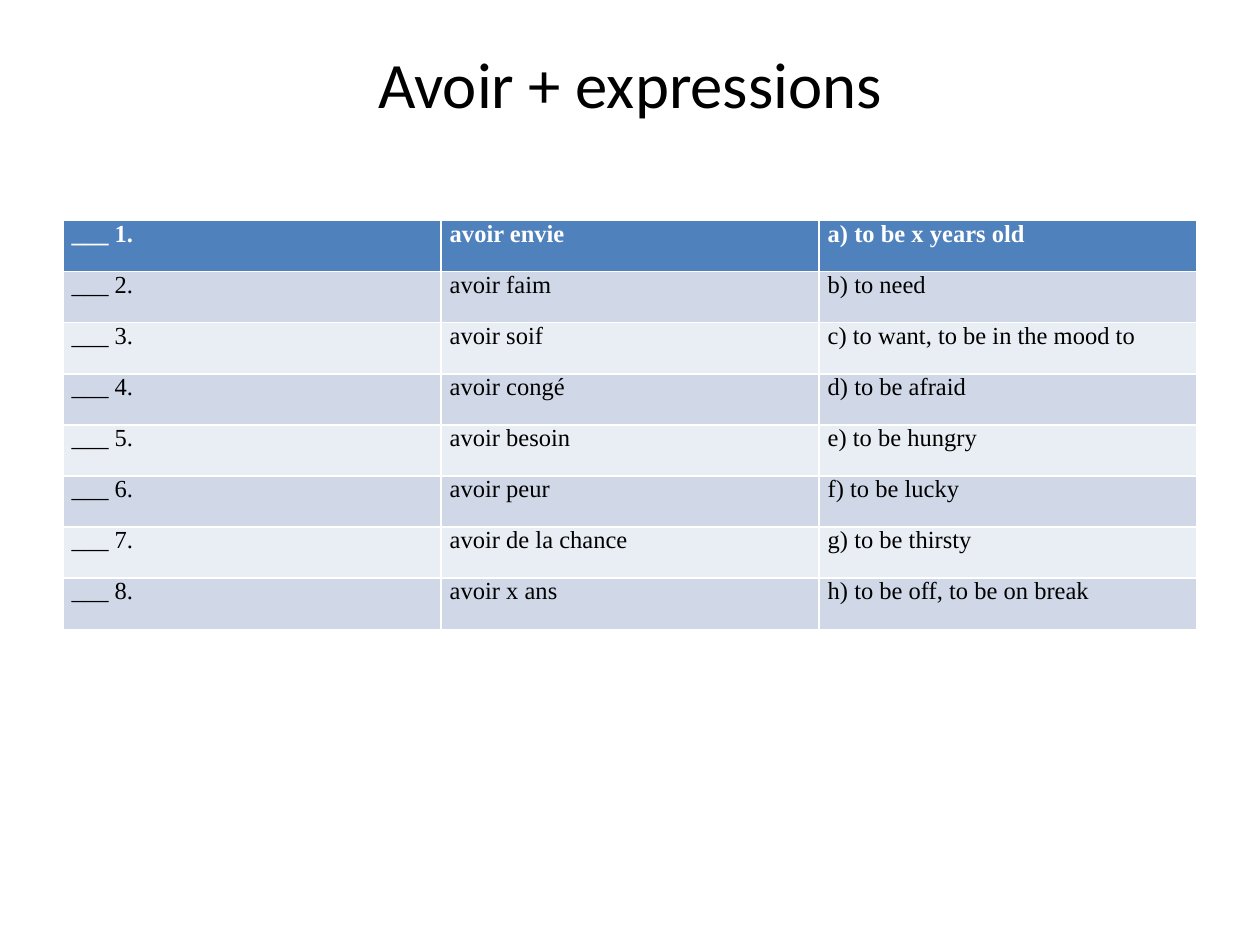
from dataclasses import dataclass

from pptx import Presentation
from pptx.dml.color import RGBColor
from pptx.enum.text import MSO_ANCHOR, MSO_AUTO_SIZE, PP_ALIGN
from pptx.slide import Slide
from pptx.text.text import TextFrame
from pptx.util import Pt

BLACK = RGBColor(0x00, 0x00, 0x00)
WHITE = RGBColor(0xFF, 0xFF, 0xFF)
HEADER_BLUE = RGBColor(0x4F, 0x81, 0xBD)
BAND_DARK = RGBColor(0xD0, 0xD8, 0xE8)
BAND_LIGHT = RGBColor(0xE9, 0xED, 0xF4)

TITLE_ONLY_LAYOUT = 5
COLUMN_WIDTH = 216
ROW_HEIGHT = 29.2
CELL_MARGIN = 5


@dataclass(frozen=True)
class MatchingRow:
    expression: str
    meaning: str


MATCHING_ROWS = [
    MatchingRow("avoir envie", "a) to be x years old"),
    MatchingRow("avoir faim", "b) to need"),
    MatchingRow("avoir soif", "c) to want, to be in the mood to"),
    MatchingRow("avoir congé", "d) to be afraid"),
    MatchingRow("avoir besoin", "e) to be hungry"),
    MatchingRow("avoir peur", "f) to be lucky"),
    MatchingRow("avoir de la chance", "g) to be thirsty"),
    MatchingRow("avoir x ans", "h) to be off, to be on break"),
]


def write_text(frame: TextFrame, text: str, *, font: str, size: float,
               color: RGBColor = BLACK, bold: bool = False,
               align: PP_ALIGN = PP_ALIGN.LEFT) -> None:
    """Fill a frame with one paragraph; a vertical tab is a line break."""
    paragraph = frame.paragraphs[0]
    paragraph.text = text
    paragraph.alignment = align
    for run in paragraph.runs:
        run.font.name = font
        run.font.size = Pt(size)
        run.font.bold = bold
        run.font.color.rgb = color


def add_title(slide: Slide, text: str) -> None:
    title = slide.shapes.title
    title.left, title.top = Pt(36), Pt(21.6)
    title.width, title.height = Pt(648), Pt(90)
    frame = title.text_frame
    frame.vertical_anchor = MSO_ANCHOR.MIDDLE
    frame.auto_size = MSO_AUTO_SIZE.TEXT_TO_FIT_SHAPE
    write_text(frame, text, font="Calibri", size=44, align=PP_ALIGN.CENTER)


def add_matching_table(slide: Slide, rows: list[MatchingRow]) -> None:
    table = slide.shapes.add_table(
        len(rows), 3, Pt(36), Pt(126),
        Pt(3 * COLUMN_WIDTH), Pt(len(rows) * ROW_HEIGHT)).table
    for column in table.columns:
        column.width = Pt(COLUMN_WIDTH)

    for index, row in enumerate(rows):
        table.rows[index].height = Pt(ROW_HEIGHT)
        is_header = index == 0
        band = BAND_DARK if index % 2 else BAND_LIGHT
        texts = (f"___ {index + 1}.", row.expression, row.meaning)
        for cell, text in zip(table.rows[index].cells, texts):
            cell.margin_left = cell.margin_right = Pt(CELL_MARGIN)
            cell.margin_top = cell.margin_bottom = Pt(0)
            cell.fill.solid()
            cell.fill.fore_color.rgb = HEADER_BLUE if is_header else band
            write_text(cell.text_frame, text, font="Times New Roman", size=14,
                       color=WHITE if is_header else BLACK, bold=is_header)


def main() -> None:
    presentation = Presentation()
    presentation.slide_width, presentation.slide_height = Pt(720), Pt(540)
    slide = presentation.slides.add_slide(
        presentation.slide_layouts[TITLE_ONLY_LAYOUT])

    # Title, with an empty second line
    add_title(slide, "Avoir + expressions\v")

    # Matching exercise: blank, expression, meaning
    add_matching_table(slide, MATCHING_ROWS)

    presentation.save("out.pptx")


if __name__ == "__main__":
    main()
